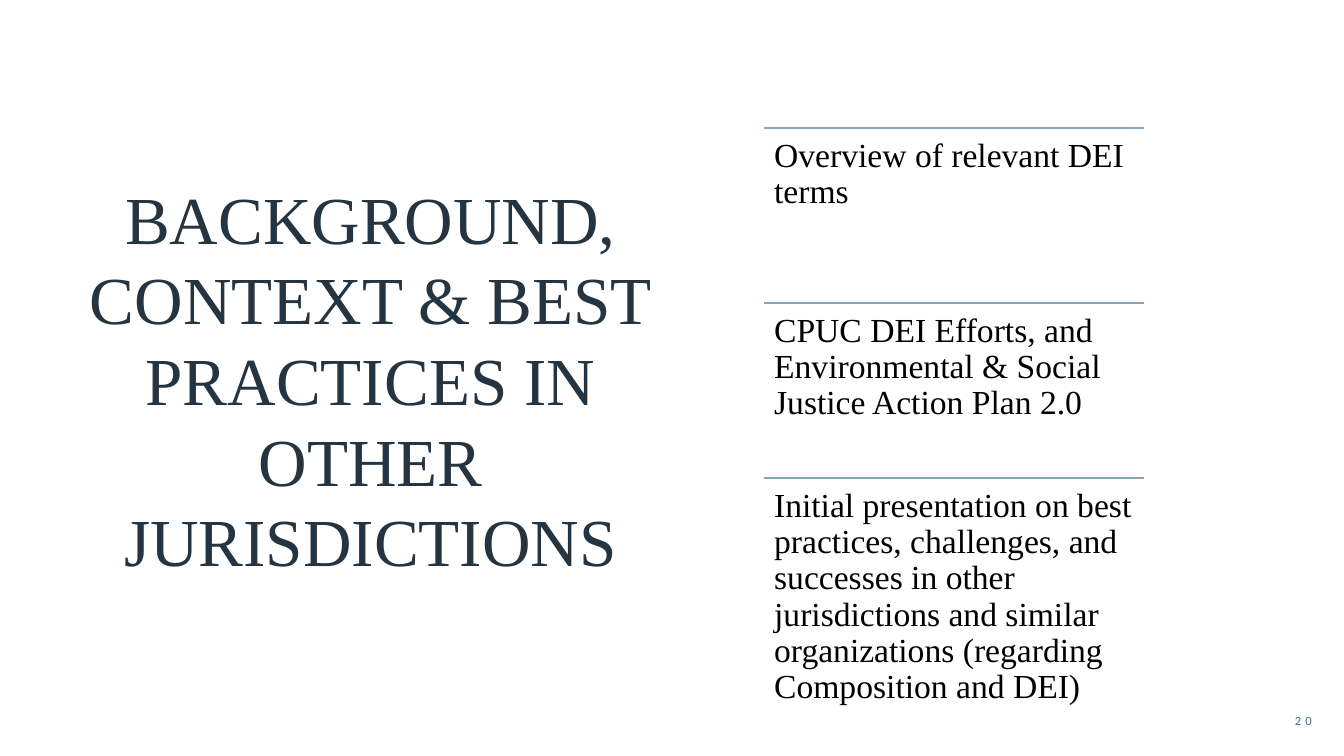
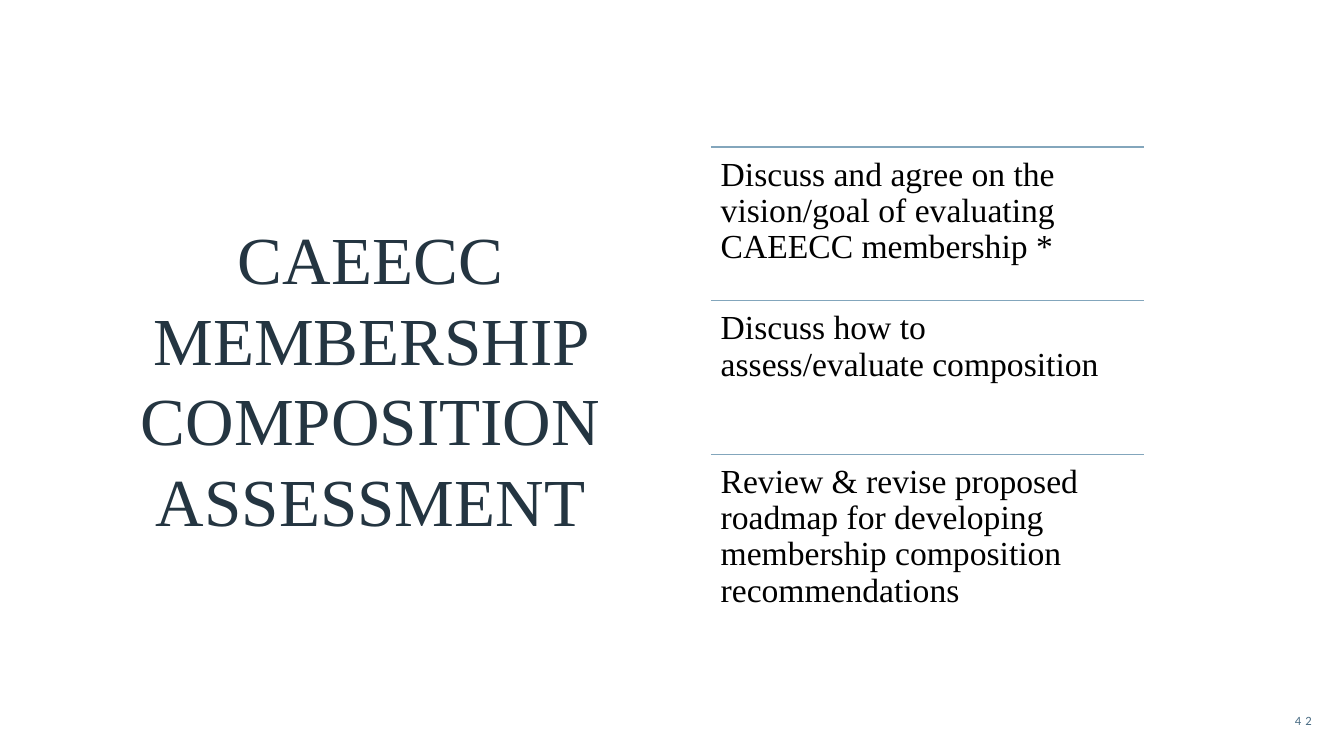
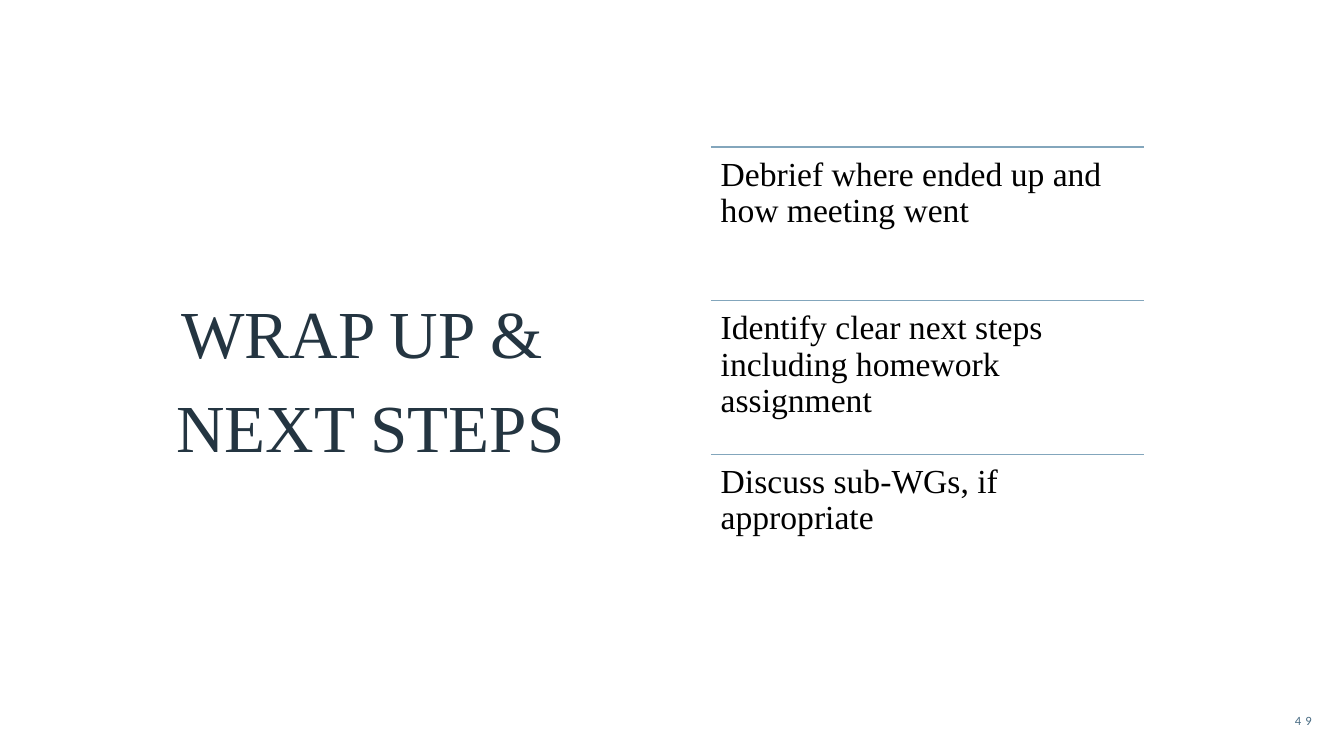
from dataclasses import dataclass

from lxml import etree
from pptx import Presentation
from pptx.dml.color import RGBColor
from pptx.enum.shapes import MSO_CONNECTOR
from pptx.enum.text import MSO_ANCHOR, MSO_AUTO_SIZE, PP_ALIGN
from pptx.oxml.ns import qn
from pptx.util import Inches, Pt

STRAIGHT = MSO_CONNECTOR.STRAIGHT
TOP, MIDDLE = MSO_ANCHOR.TOP, MSO_ANCHOR.MIDDLE
LEFT, CENTER, RIGHT = PP_ALIGN.LEFT, PP_ALIGN.CENTER, PP_ALIGN.RIGHT
TITLE_ONLY = 5


@dataclass(frozen=True)
class TextStyle:
    font: str
    size: int
    color: str
    align: int
    anchor: int
    line_spacing: float | None = None
    space_before: int = 0
    margin_y: float = 0.05
    tracking: int = 0


@dataclass(frozen=True)
class Theme:
    rule_color: str = "83A6BC"
    rule_width: int = 1
    title: TextStyle = TextStyle("Times New Roman", 48, "243541", CENTER, MIDDLE,
                                 space_before=10)
    item: TextStyle = TextStyle("Times New Roman", 24, "000000", LEFT, TOP,
                                line_spacing=0.9, margin_y=0.1)
    number: TextStyle = TextStyle("Calibri", 9, "486B83", RIGHT, MIDDLE, tracking=3)


@dataclass(frozen=True)
class Box:
    left: float
    top: float
    width: float
    height: float

    def inches(self) -> tuple:
        return tuple(Inches(v) for v in (self.left, self.top, self.width, self.height))


@dataclass(frozen=True)
class Section:
    title: tuple[str, ...]
    items: tuple[str, ...]
    list_box: Box
    number: str


THEME = Theme()
TITLE_BOX = Box(0.3, 1.09, 6.75, 5.33)
NUMBER_BOX = Box(12.16, 6.95, 0.95, 0.4)
TALL_LIST = Box(7.58, 1.27, 3.77, 5.21)
WIDE_LIST = Box(7.05, 1.46, 4.3, 4.57)

SECTIONS = (
    Section(
        ("BACKGROUND, CONTEXT & BEST PRACTICES IN OTHER JURISDICTIONS",),
        ("Overview of relevant DEI terms",
         "CPUC DEI Efforts, and Environmental & Social Justice Action Plan 2.0",
         "Initial presentation on best practices, challenges, and successes in other "
         "jurisdictions and similar organizations (regarding Composition and DEI)"),
        TALL_LIST, "20"),
    Section(
        ("CAEECC MEMBERSHIP COMPOSITION ASSESSMENT",),
        ("Discuss and agree on the vision/goal of evaluating CAEECC membership *",
         "Discuss how to assess/evaluate composition",
         "Review & revise proposed roadmap for developing membership composition "
         "recommendations"),
        WIDE_LIST, "42"),
    Section(
        ("WRAP UP & ", "NEXT STEPS"),
        ("Debrief where ended up and how meeting went",
         "Identify clear next steps including homework assignment",
         "Discuss sub-WGs, if appropriate"),
        WIDE_LIST, "49"),
)


def set_attributes(target, values: dict) -> None:
    for name, value in values.items():
        setattr(target, name, value)


def write_text(sp, lines: tuple[str, ...], style: TextStyle) -> None:
    """Fill a shape with one paragraph per line in the given style."""
    tf = sp.text_frame
    set_attributes(tf, {
        "word_wrap": True, "auto_size": MSO_AUTO_SIZE.NONE,
        "vertical_anchor": style.anchor,
        "margin_left": Inches(0.1), "margin_right": Inches(0.1),
        "margin_top": Inches(style.margin_y), "margin_bottom": Inches(style.margin_y),
    })
    for i, line in enumerate(lines):
        p = tf.add_paragraph() if i else tf.paragraphs[0]
        set_attributes(p, {"alignment": style.align, "line_spacing": style.line_spacing,
                           "space_before": Pt(style.space_before)})
        r = p.add_run()
        r.text = line
        set_attributes(r.font, {"name": style.font, "size": Pt(style.size)})
        r.font.color.rgb = RGBColor.from_string(style.color)
        if style.tracking:
            r.font._element.set("spc", str(style.tracking * 100))


def add_text(shapes, box: Box, text: str, style: TextStyle) -> None:
    write_text(shapes.add_textbox(*box.inches()), (text,), style)


def add_rule(shapes, box: Box) -> None:
    """Draw a line along the top edge of the box."""
    left, top, width, _ = box.inches()
    rule = shapes.add_connector(STRAIGHT, left, top, left + width, top)
    rule.line.color.rgb = RGBColor.from_string(THEME.rule_color)
    rule.line.width = Pt(THEME.rule_width)
    etree.SubElement(rule._element.spPr, qn("a:effectLst"))


def add_ruled_list(slide, items: tuple[str, ...], box: Box) -> None:
    """Split the box into equal rows, each with a rule above its text."""
    shapes = slide.shapes.add_group_shape().shapes
    height = box.height / len(items)
    for i, item in enumerate(items):
        row = Box(box.left, box.top + i * height, box.width, height)
        add_rule(shapes, row)
        add_text(shapes, row, item, THEME.item)


def add_section(prs, section: Section) -> None:
    slide = prs.slides.add_slide(prs.slide_layouts[TITLE_ONLY])
    title = slide.shapes.title
    set_attributes(title, dict(zip(("left", "top", "width", "height"),
                                   TITLE_BOX.inches())))
    write_text(title, section.title, THEME.title)
    add_ruled_list(slide, section.items, section.list_box)
    add_text(slide.shapes, NUMBER_BOX, section.number, THEME.number)


def main() -> None:
    prs = Presentation()
    prs.slide_width, prs.slide_height = Inches(13.33), Inches(7.5)
    for section in SECTIONS:
        add_section(prs, section)
    prs.save("out.pptx")


if __name__ == "__main__":
    main()
